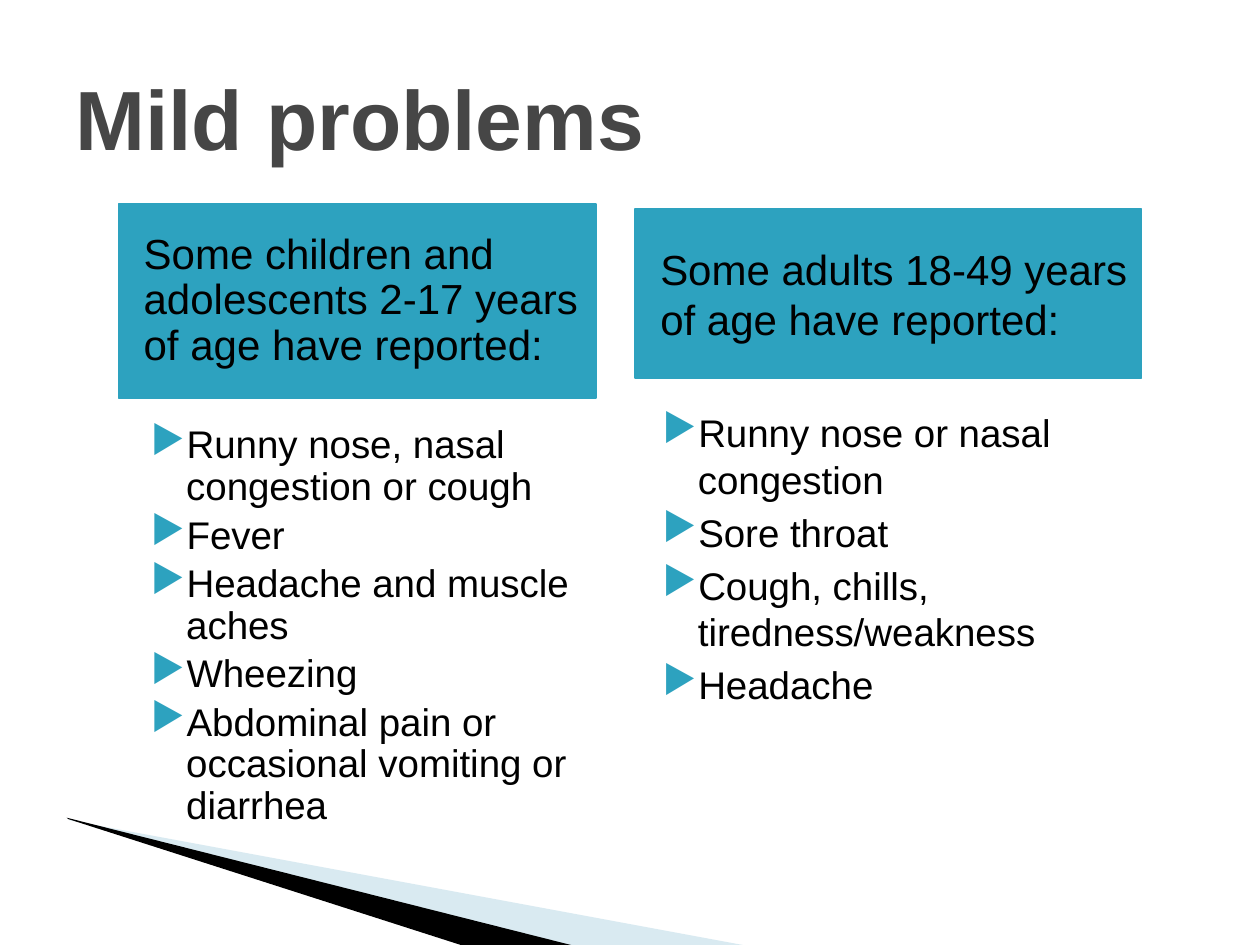
from lxml.etree import SubElement
from pptx import Presentation
from pptx.dml.color import RGBColor
from pptx.enum.shapes import MSO_SHAPE as Shape
from pptx.enum.text import MSO_ANCHOR as Anchor
from pptx.oxml.ns import qn
from pptx.util import Inches, Pt

COLORS = {"teal": "2DA2BF", "pale": "9FCBDC", "ink": "000000", "title": "464646"}
KIDS = [
    "Runny nose, nasal congestion or cough",
    "Fever",
    "Headache and muscle aches",
    "Wheezing",
    "Abdominal pain or occasional vomiting or diarrhea",
]
ADULTS = [
    "Runny nose or nasal congestion",
    "Sore throat",
    "Cough, chills, tiredness/weakness",
    "Headache",
]


def color(name):
    """Return the named colour."""
    return RGBColor.from_string(COLORS[name])


def assign(item, values):
    """Set each attribute in a dict of values."""
    for key, value in values.items():
        setattr(item, key, value)


def write(frame, lines, size, hue="ink", bold=False, left=0.1, anchor=Anchor.TOP, **form):
    """Fill a text frame with one paragraph per line."""
    assign(frame, {"word_wrap": True, "vertical_anchor": anchor, "margin_left": Inches(left)})
    for i, line in enumerate(lines):
        para = frame.paragraphs[0] if i == 0 else frame.add_paragraph()
        assign(para, {"text": line, **form})
        assign(para.font, {"name": "Arial", "size": Pt(size), "bold": bold})
        para.font.color.rgb = color(hue)


def add_text(slide, box, lines, size, **form):
    """Add a text box and return its frame."""
    frame = slide.shapes.add_textbox(*map(Inches, box)).text_frame
    write(frame, lines, size, **form)
    return frame


def add_head(slide, box, text, space):
    """Add a filled column heading."""
    shape = slide.shapes.add_shape(Shape.RECTANGLE, *map(Inches, box))
    shape.shadow.inherit = False
    shape.fill.solid()
    shape.fill.fore_color.rgb = color("teal")
    shape.line.color.rgb = color("teal")
    shape.line.width = Pt(0.75)
    write(shape.text_frame, [text], 24, left=0.2, anchor=Anchor.MIDDLE,
          alignment=1, line_spacing=space)


def add_list(slide, box, lines, space):
    """Add a list with triangle bullets."""
    frame = add_text(slide, box, lines, 22, line_spacing=space)
    for i, para in enumerate(frame.paragraphs):
        para.space_before = Pt(4 if i else 0)
        props = para._p.get_or_add_pPr()
        props.set("marL", str(Inches(0.4)))
        props.set("indent", str(Inches(-0.28)))
        tint = SubElement(props, qn("a:buClr"))
        SubElement(tint, qn("a:srgbClr"), val=COLORS["teal"])
        SubElement(props, qn("a:buChar"), char="▶")


def add_wedge(slide, points, hue, alpha=100):
    """Add a closed wedge with optional transparency."""
    first, *rest = [(Inches(x), Inches(y)) for x, y in points]
    path = slide.shapes.build_freeform(*first)
    path.add_line_segments(rest, close=True)
    shape = path.convert_to_shape()
    shape.shadow.inherit = False
    shape.fill.solid()
    shape.fill.fore_color.rgb = color(hue)
    shape.line.fill.background()
    if alpha < 100:
        tint = shape.fill._xPr.find(".//" + qn("a:srgbClr"))
        SubElement(tint, qn("a:alpha"), val=str(alpha * 1000))


def main():
    """Build and save the slide."""
    deck = Presentation()
    assign(deck, {"slide_width": Inches(10), "slide_height": Inches(7.5)})
    slide = deck.slides.add_slide(deck.slide_layouts[6])
    add_wedge(slide, [(0.55, 6.51), (5.95, 7.51), (4.56, 7.51), (0.55, 6.5)], "pale", 39)
    add_wedge(slide, [(0.53, 6.49), (4.57, 7.51), (3.72, 7.52), (0.54, 6.5)], "ink")
    add_text(slide, (0.5, 0.3, 9, 1.25), ["Mild problems"], 48,
             hue="title", bold=True, anchor=Anchor.MIDDLE)
    add_head(slide, (0.94, 1.62, 3.79, 1.54),
             "Some children and adolescents 2-17 years of age have reported:", 0.9)
    add_head(slide, (5.04, 1.66, 4.02, 1.34),
             "Some adults 18-49 years of age have reported:", 1.0)
    add_list(slide, (0.98, 3.33, 3.83, 3.6), KIDS, 0.9)
    add_list(slide, (5.04, 3.2, 3.82, 3.35), ADULTS, 1.0)
    deck.save("out.pptx")


if __name__ == "__main__":
    main()
